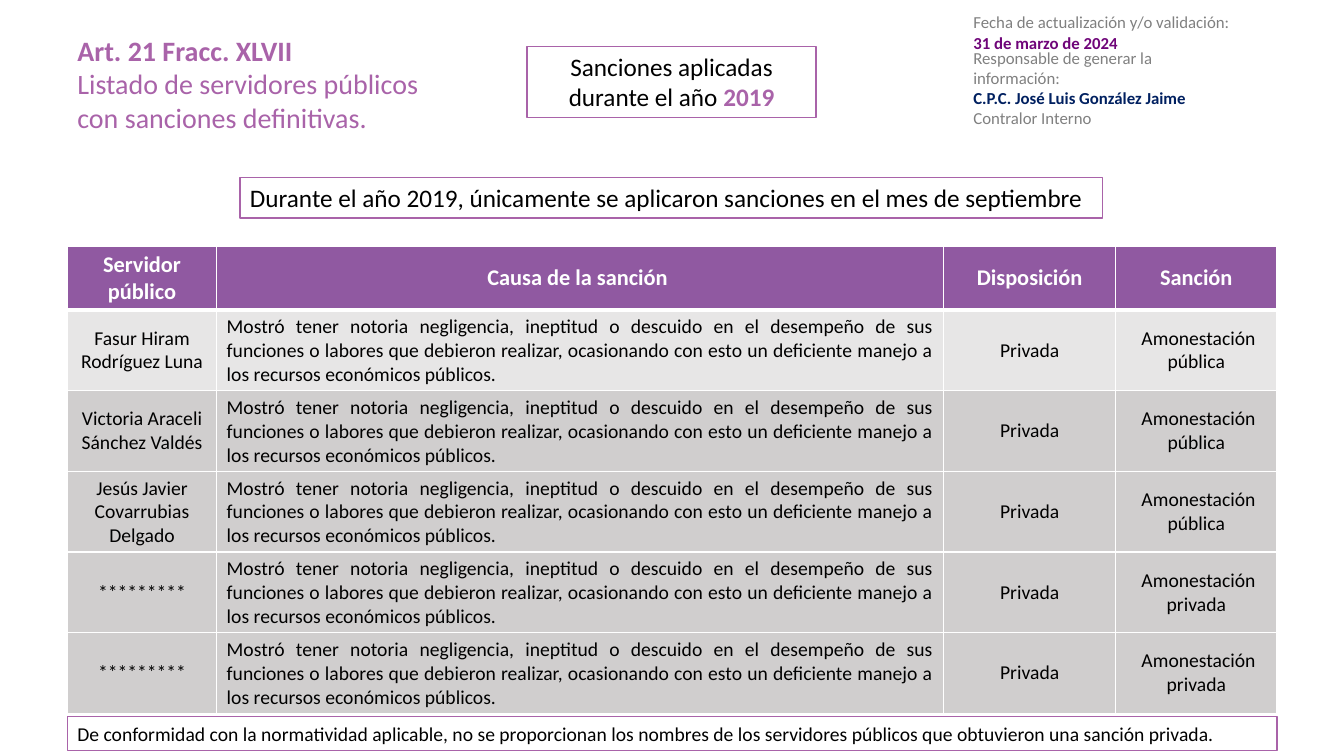
import lxml.etree
import pptx
import pptx.dml.color
import pptx.enum.shapes
import pptx.enum.text
import pptx.oxml.ns
import pptx.util

Cm = pptx.util.Cm
Pt = pptx.util.Pt
RGBColor = pptx.dml.color.RGBColor
ALIGN = pptx.enum.text.PP_ALIGN
ANCHOR = pptx.enum.text.MSO_ANCHOR

WHITE = RGBColor(0xFF, 0xFF, 0xFF)
BLACK = RGBColor(0x00, 0x00, 0x00)
GRAY = RGBColor(0x80, 0x80, 0x80)
ORCHID = RGBColor(0xA9, 0x63, 0xA9)
PURPLE = RGBColor(0x6F, 0x05, 0x79)
NAVY = RGBColor(0x00, 0x20, 0x60)
HEADER_FILL = RGBColor(0x90, 0x59, 0xA1)
FIRST_ROW_FILL = RGBColor(0xE7, 0xE6, 0xE6)
ROW_FILL = RGBColor(0xD0, 0xCE, 0xCE)

CAUSE = (
    "Mostró tener notoria negligencia, ineptitud o descuido en el desempeño de sus "
    "funciones o labores que debieron realizar, ocasionando con esto un deficiente "
    "manejo a los recursos económicos públicos."
)
HEADERS = ["Servidor público", "Causa de la sanción ", "Disposición", "Sanción"]
SANCTIONS = [
    ("Fasur Hiram Rodríguez Luna", "pública"),
    ("Victoria Araceli Sánchez Valdés", "pública"),
    ("Jesús Javier Covarrubias Delgado", "pública"),
    ("*********", "privada"),
    ("*********", "privada"),
]
COLUMN_WIDTHS = [3.76, 18.32, 4.34, 4.06]
HEADER_HEIGHT = 1.6
ROW_HEIGHT = 2.03


def apply_format(target, values):
    for name, value in values.items():
        setattr(target, name, value)


def write_paragraphs(text_frame, paragraphs, size, alignment=ALIGN.LEFT):
    for index, runs in enumerate(paragraphs):
        paragraph = text_frame.add_paragraph() if index else text_frame.paragraphs[0]
        paragraph.alignment = alignment
        for text, color, bold in runs:
            run = paragraph.add_run()
            run.text = text
            apply_format(run.font, {"name": "Calibri", "size": Pt(size), "bold": bold})
            run.font.color.rgb = color


def add_text(slide, box, paragraphs, size, wrap=True):
    shape = slide.shapes.add_textbox(*map(Cm, box))
    apply_format(shape.text_frame, {"word_wrap": wrap, "vertical_anchor": ANCHOR.TOP})
    write_paragraphs(shape.text_frame, paragraphs, size)


def add_framed_text(slide, box, runs, size, alignment=ALIGN.LEFT):
    shape = slide.shapes.add_shape(
        pptx.enum.shapes.MSO_SHAPE.RECTANGLE, *map(Cm, box)
    )
    shape.shadow.inherit = False
    shape.fill.solid()
    shape.fill.fore_color.rgb = WHITE
    shape.line.color.rgb = ORCHID
    shape.line.width = Pt(1)
    apply_format(shape.text_frame, {"word_wrap": True, "vertical_anchor": ANCHOR.TOP})
    write_paragraphs(shape.text_frame, [runs], size, alignment)


def set_borders(cell, widths):
    properties = cell._tc.get_or_add_tcPr()
    for index, (side, width) in enumerate(widths.items()):
        line = lxml.etree.Element(
            pptx.oxml.ns.qn(f"a:ln{side}"), w=str(Pt(width))
        )
        fill = lxml.etree.SubElement(line, pptx.oxml.ns.qn("a:solidFill"))
        lxml.etree.SubElement(fill, pptx.oxml.ns.qn("a:srgbClr"), val=str(WHITE))
        properties.insert(index, line)


def add_responsibility(slide, left, top):
    add_text(
        slide,
        (left, top, 7.14, 1.27),
        [
            [("Fecha de actualización y/o validación:", GRAY, False)],
            [("31 de marzo de 2024", PURPLE, True)],
        ],
        12,
        wrap=False,
    )
    add_text(
        slide,
        (left, top + 0.89, 6.73, 2.31),
        [
            [("Responsable de generar la información:", GRAY, False)],
            [("C.P.C. José Luis González Jaime", NAVY, True)],
            [("Contralor Interno", GRAY, False)],
        ],
        12,
    )


def add_title(slide, box):
    add_text(
        slide,
        box,
        [
            [("Art. 21 Fracc. XLVII", ORCHID, True)],
            [("Listado de servidores públicos con sanciones definitivas.", ORCHID, False)],
        ],
        20,
    )


def add_sanctions_table(slide, left, top):
    rows = [HEADERS] + [
        [name, CAUSE, "Privada", f" Amonestación {kind}"] for name, kind in SANCTIONS
    ]
    heights = [HEADER_HEIGHT] + [ROW_HEIGHT] * len(SANCTIONS)
    box = (left, top, sum(COLUMN_WIDTHS), sum(heights))
    table = slide.shapes.add_table(
        len(rows), len(HEADERS), *map(Cm, box)
    ).table
    table.horz_banding = False
    for column, width in zip(table.columns, COLUMN_WIDTHS):
        column.width = Cm(width)
    for row_index, values in enumerate(rows):
        table.rows[row_index].height = Cm(heights[row_index])
        header = row_index == 0
        fill = {0: HEADER_FILL, 1: FIRST_ROW_FILL}.get(row_index, ROW_FILL)
        for column_index, value in enumerate(values):
            cell = table.cell(row_index, column_index)
            cell.vertical_anchor = ANCHOR.MIDDLE
            cell.fill.solid()
            cell.fill.fore_color.rgb = fill
            set_borders(
                cell,
                {"L": 1, "R": 1, "T": 3 if row_index == 1 else 1, "B": 3 if header else 1},
            )
            justified = column_index == 1 and not header
            write_paragraphs(
                cell.text_frame,
                [[(value, WHITE if header else BLACK, header)]],
                16 if header else 14,
                ALIGN.JUSTIFY if justified else ALIGN.CENTER,
            )


def main():
    presentation = pptx.Presentation()
    apply_format(presentation, {"slide_width": Cm(33.87), "slide_height": Cm(19.05)})
    slide = presentation.slides.add_slide(presentation.slide_layouts[6])
    add_responsibility(slide, 24.28, 0.18)
    add_title(slide, (1.7, 0.71, 9.78, 3.68))
    add_sanctions_table(slide, 1.7, 6.2)
    add_framed_text(
        slide,
        (6.05, 4.48, 21.74, 1.02),
        [(
            "Durante el año 2019, únicamente se aplicaron sanciones en el mes de septiembre",
            BLACK,
            False,
        )],
        18,
    )
    add_framed_text(
        slide,
        (1.7, 18.06, 30.48, 0.86),
        [(
            "De conformidad con la normatividad aplicable, no se proporcionan los nombres "
            "de los servidores públicos que obtuvieron una sanción privada.",
            BLACK,
            False,
        )],
        14,
    )
    add_framed_text(
        slide,
        (13.28, 1.17, 7.29, 1.8),
        [("Sanciones aplicadas durante el año ", BLACK, False), ("2019", ORCHID, True)],
        18,
        ALIGN.CENTER,
    )
    presentation.save("out.pptx")


if __name__ == "__main__":
    main()
